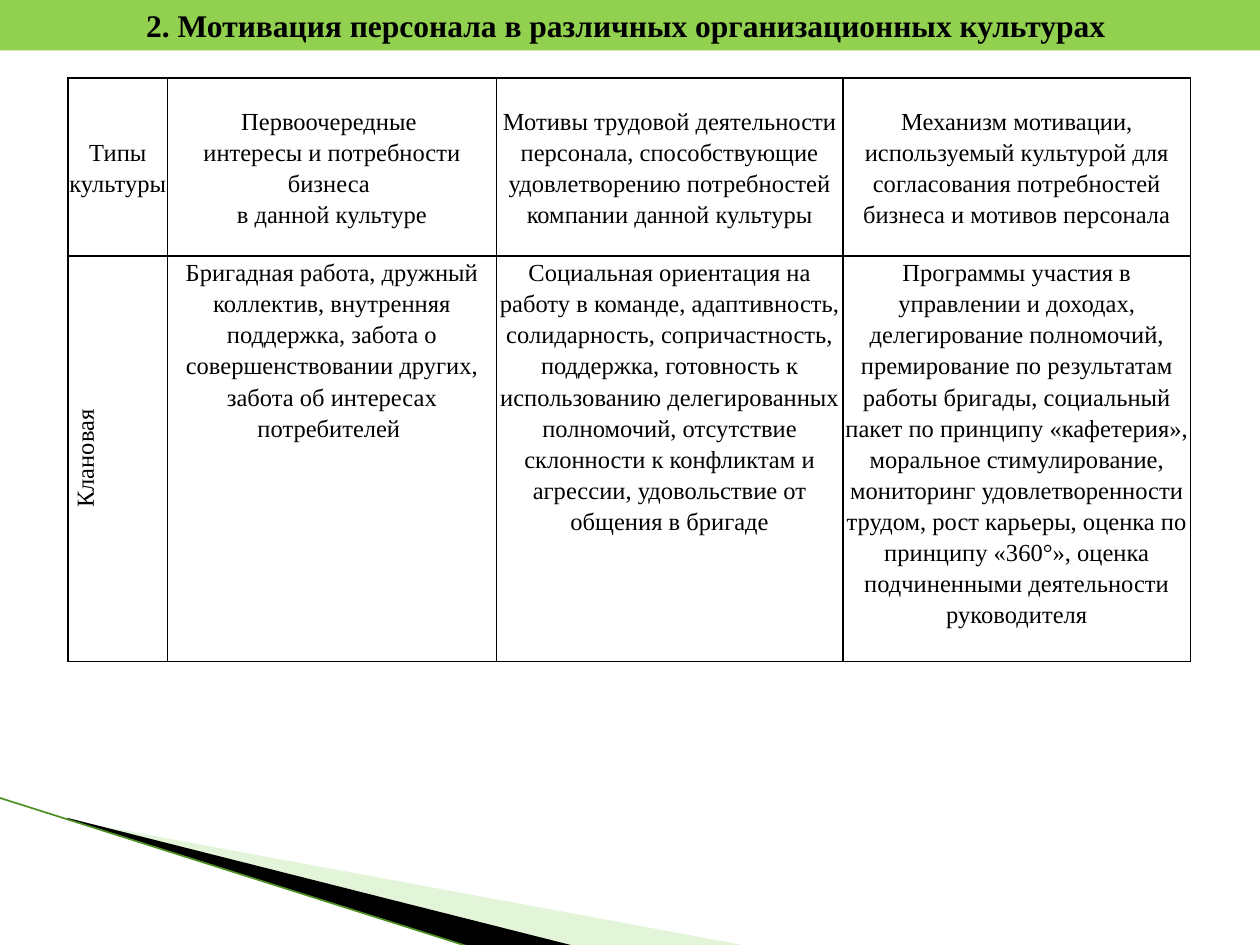
from lxml.etree import SubElement
from pptx import Presentation
from pptx.dml.color import RGBColor
from pptx.enum.shapes import MSO_CONNECTOR
from pptx.enum.text import MSO_ANCHOR, MSO_AUTO_SIZE, PP_ALIGN
from pptx.oxml import parse_xml
from pptx.oxml.ns import nsdecls, qn
from pptx.util import Inches, Pt


def color(value):
    return RGBColor.from_string(value)


def add_run(paragraph, text, size, bold=False):
    run = paragraph.add_run()
    run.text = text
    run.font.name = "Times New Roman"
    run.font.size = Pt(size)
    run.font.bold = bold
    run.font.color.rgb = color("000000")


presentation = Presentation()
presentation.slide_width = Inches(10)
presentation.slide_height = Inches(7.5)
slide = presentation.slides.add_slide(presentation.slide_layouts[5])

# Corner wedges: fill, opacity, frame, and outline points that reach past the frame
wedges = [
    ("B8E7A1", 40, (0.78, 5.47, 4.16, 1.58),
     [(0.55, 6.51), (5.95, 7.51), (4.56, 7.51), (0.55, 6.5)]),
    ("000000", 100, (-0.06, 6.33, 4.16, 0.92),
     [(0.53, 6.49), (4.57, 7.51), (3.72, 7.51), (0.54, 6.5)]),
]
for fill, opacity, wedge_frame, points in wedges:
    corners = [(Inches(x), Inches(y)) for x, y in points]
    builder = slide.shapes.build_freeform(*corners[0])
    builder.add_line_segments(corners[1:])
    wedge = builder.convert_to_shape()
    left, top, width, height = [Inches(length) for length in wedge_frame]
    shift_x, shift_y = wedge.left - left, wedge.top - top
    wedge.left, wedge.top, wedge.width, wedge.height = left, top, width, height
    for outline in wedge._element.iter(qn("a:path")):
        outline.set("w", str(width))
        outline.set("h", str(height))
    for point in wedge._element.iter(qn("a:pt")):
        point.set("x", str(int(point.get("x")) + shift_x))
        point.set("y", str(int(point.get("y")) + shift_y))
    wedge.shadow.inherit = False
    wedge.fill.solid()
    wedge.fill.fore_color.rgb = color(fill)
    wedge.line.fill.background()
    if opacity < 100:
        fill_color = wedge._element.spPr.find(qn("a:solidFill"))[0]
        SubElement(fill_color, qn("a:alpha"), val=str(opacity * 1000))

# Thin green line along the wedges
edge = slide.shapes.add_connector(
    MSO_CONNECTOR.STRAIGHT, Inches(-0.01), Inches(6.33), Inches(3.71), Inches(7.51))
edge.line.color.rgb = color("4E8F22")
edge.line.width = Pt(0.95)
SubElement(edge._element.spPr, qn("a:effectLst"))

# Title band
title = slide.shapes.title
title.left, title.top = Inches(0), Inches(0)
title.width, title.height = Inches(10), Inches(0.4)
title.fill.solid()
title.fill.fore_color.rgb = color("92D050")
frame = title.text_frame
frame.word_wrap = True
frame.auto_size = MSO_AUTO_SIZE.NONE
frame.vertical_anchor = MSO_ANCHOR.MIDDLE
frame.paragraphs[0].alignment = PP_ALIGN.CENTER
add_run(frame.paragraphs[0],
        "2. Мотивация персонала в различных организационных культурах ", 18, bold=True)

# Table: each cell is a list of paragraphs
rows = [
    [
        ["Типы культуры"],
        ["Первоочередные ", "интересы и потребности бизнеса ", "в данной культуре"],
        ["Мотивы трудовой деятельности персонала, способствующие "
         "удовлетворению потребностей компании данной культуры"],
        ["Механизм мотивации, используемый культурой для согласования "
         "потребностей бизнеса и мотивов персонала"],
    ],
    [
        ["Клановая"],
        ["Бригадная работа, дружный коллектив, внутренняя поддержка, забота о "
         "совершенствовании других, забота об интересах потребителей "],
        ["Социальная ориентация на работу в команде, адаптивность, солидарность, "
         "сопричастность, поддержка, готовность к использованию делегированных "
         "полномочий, отсутствие склонности к конфликтам и агрессии, "
         "удовольствие от общения в бригаде"],
        ["Программы участия в управлении и доходах, делегирование полномочий, "
         "премирование по результатам работы бригады, социальный пакет по принципу "
         "«кафетерия», моральное стимулирование, мониторинг удовлетворенности трудом, "
         "рост карьеры, оценка по принципу «360°», оценка подчиненными деятельности "
         "руководителя"],
    ],
]
column_widths = [0.79, 2.61, 2.75, 2.76]
row_heights = [1.41, 3.22]
table = slide.shapes.add_table(
    len(rows), len(column_widths), Inches(0.54), Inches(0.62),
    Inches(sum(column_widths)), Inches(sum(row_heights))).table
table.first_row = False
table.horz_banding = False
for column, width in zip(table.columns, column_widths):
    column.width = Inches(width)
for row, height in zip(table.rows, row_heights):
    row.height = Inches(height)

for row_index, row_texts in enumerate(rows):
    for column_index, texts in enumerate(row_texts):
        cell = table.cell(row_index, column_index)
        is_label = row_index == 0 or column_index == 0
        cell.margin_left = cell.margin_right = Inches(0.01)
        cell.margin_top = cell.margin_bottom = Inches(0)
        cell.vertical_anchor = MSO_ANCHOR.MIDDLE if is_label else MSO_ANCHOR.TOP
        properties = cell._tc.get_or_add_tcPr()
        if row_index > 0 and column_index == 0:
            properties.set("vert", "vert270")
        for side in ("lnL", "lnR", "lnT", "lnB"):
            properties.append(parse_xml(
                f'<a:{side} {nsdecls("a")} w="{Pt(1)}"><a:solidFill>'
                f'<a:srgbClr val="000000"/></a:solidFill></a:{side}>'))
        cell.fill.solid()
        cell.fill.fore_color.rgb = color("FFFFFF")
        for index, text in enumerate(texts):
            text_frame = cell.text_frame
            paragraph = text_frame.add_paragraph() if index else text_frame.paragraphs[0]
            paragraph.alignment = PP_ALIGN.CENTER
            paragraph.line_spacing = 1.15
            if not is_label:
                paragraph._p.get_or_add_pPr().set("indent", str(Inches(-0.03)))
            add_run(paragraph, text, 14)

presentation.save("out.pptx")
